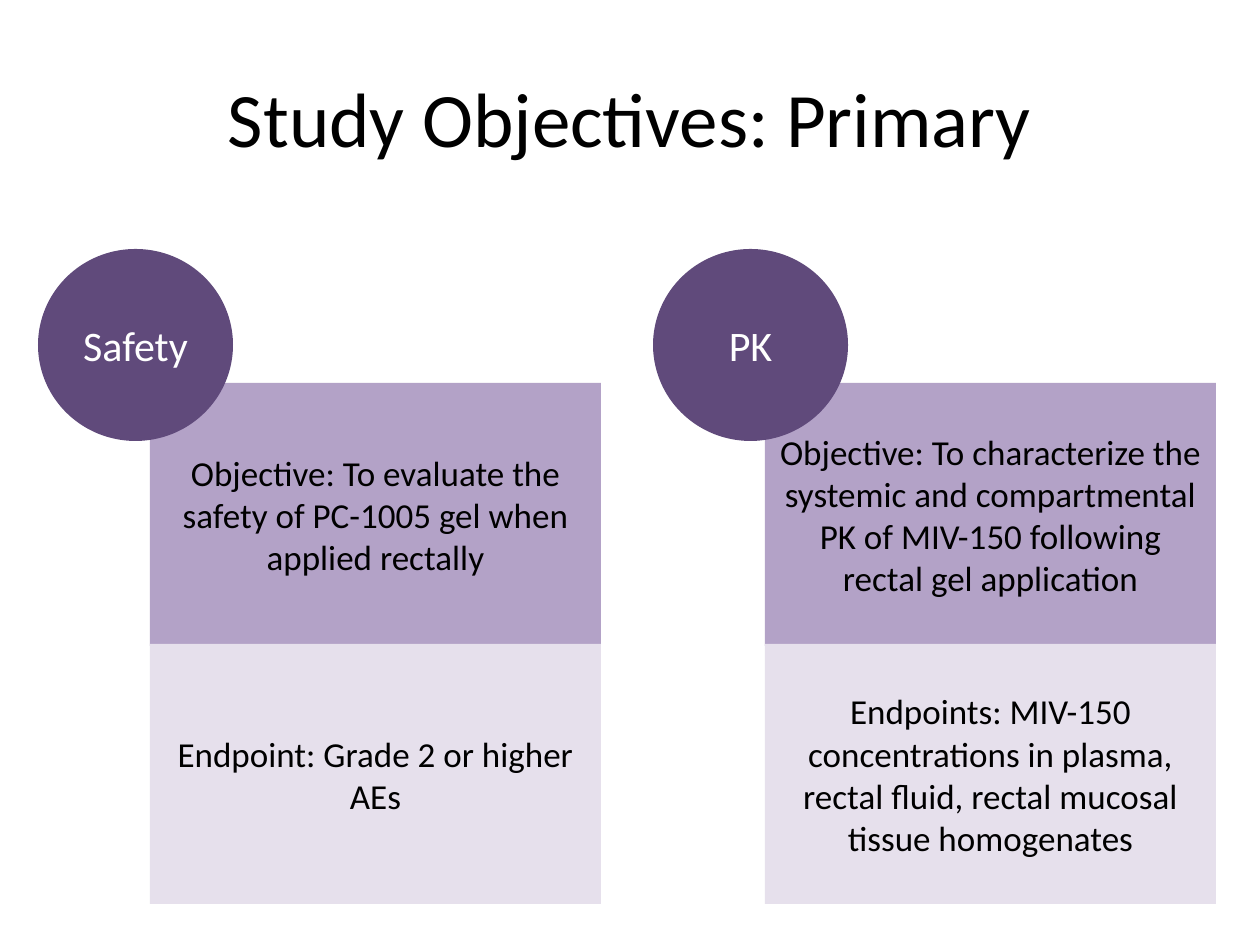
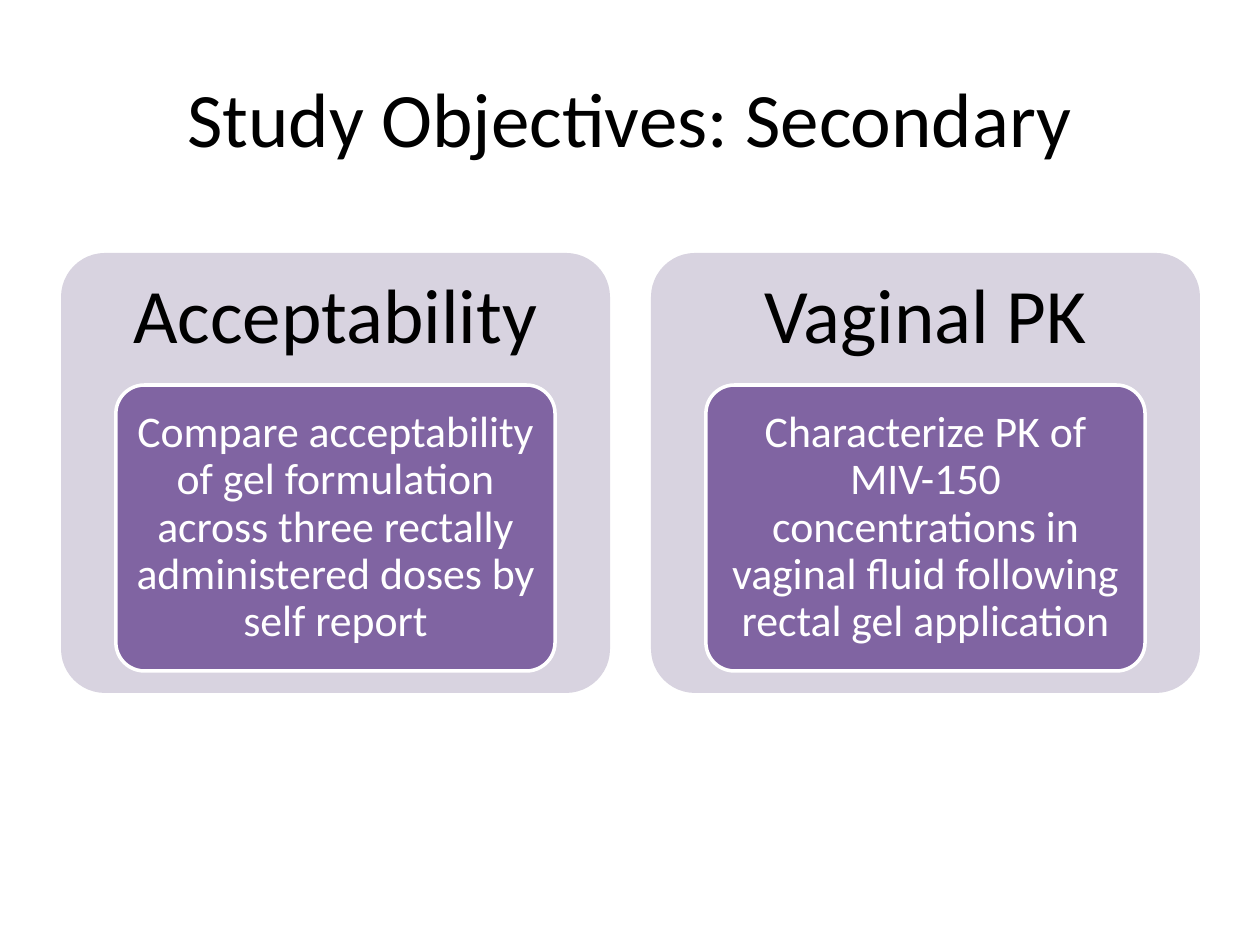
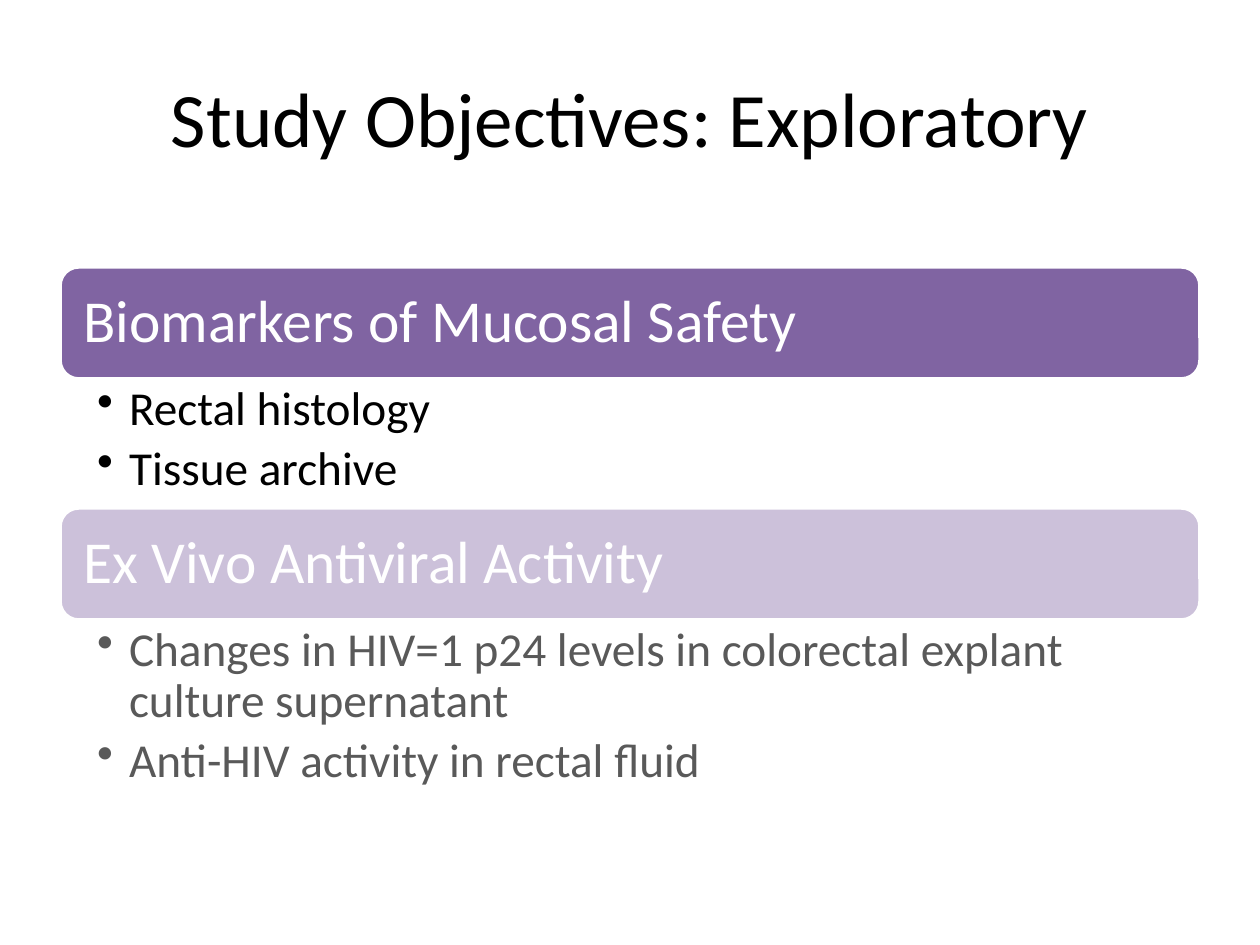
from pptx import Presentation
from pptx.dml.color import RGBColor
from pptx.enum.shapes import MSO_SHAPE as SHAPE
from pptx.enum.text import MSO_ANCHOR as ANCHOR, PP_ALIGN as ALIGN
from pptx.oxml.ns import qn
from pptx.util import Emu, Pt
from lxml.etree import SubElement

# Shared scale and style
EMU_PER_PX = 914400 / 126
FONT = "Calibri"
BLACK, WHITE, GREY = "000000", "FFFFFF", "595959"
DEEP, PURPLE, MID = "604A7B", "8064A2", "B3A2C7"
SOFT, CARD, PALE = "CCC1DA", "D8D3E0", "E6E0EC"


def px(length):
    return Emu(round(length * EMU_PER_PX))


def color(hex_code):
    return RGBColor.from_string(hex_code)


def add_bullet(para):
    props = para._p.get_or_add_pPr()
    props.set("marL", str(px(32)))
    props.set("indent", str(px(-32)))
    SubElement(props, qn("a:buChar")).set("char", "•")


def write(shape, lines, size, ink, align=ALIGN.CENTER, anchor=ANCHOR.MIDDLE,
          insets=(13, 6, 13, 6), spacing=1.0, after=0, bullets=False):
    frame = shape.text_frame
    frame.word_wrap = True
    frame.vertical_anchor = anchor
    (frame.margin_left, frame.margin_top,
     frame.margin_right, frame.margin_bottom) = map(px, insets)
    for index, line in enumerate(lines):
        para = frame.add_paragraph() if index else frame.paragraphs[0]
        para.text = line
        para.alignment = align
        para.line_spacing = spacing
        para.space_after = Pt(after)
        if bullets:
            add_bullet(para)
        para.font.name = FONT
        para.font.size = Pt(size)
        para.font.color.rgb = color(ink)


def add_text(page, box, lines, size, ink, **style):
    write(page.shapes.add_textbox(*map(px, box)), lines, size, ink, **style)


def add_panel(page, kind, box, fill, outline=None, radius=None):
    panel = page.shapes.add_shape(kind, *map(px, box))
    panel.shadow.inherit = False
    panel.fill.solid()
    panel.fill.fore_color.rgb = color(fill)
    if outline:
        panel.line.color.rgb = color(outline)
        panel.line.width = Pt(2)
    else:
        panel.line.fill.background()
    if radius is not None:
        panel.adjustments[0] = radius
    return panel


def add_page(deck, title):
    page = deck.slides.add_slide(deck.slide_layouts[6])
    add_text(page, (63, 38, 1134, 157), [title], 44, BLACK)
    return page


def objective_column(page, box, label, objective, endpoint):
    """A circle over the corner of two stacked panels."""
    left, top, width, height = box
    for offset, panel_height, fill, text in ((134, 263, MID, objective),
                                             (395, height - 395, PALE, endpoint)):
        panel = add_panel(page, SHAPE.RECTANGLE,
                          (left + 112, top + offset, width - 112, panel_height), fill)
        write(panel, [text], 20, BLACK)
    circle = add_panel(page, SHAPE.OVAL, (left, top, 195, 192), DEEP)
    write(circle, [label], 24, WHITE)


def objective_card(page, box, heading, text):
    """A rounded card with a heading and an inner panel."""
    left, top, width, height = box
    add_panel(page, SHAPE.ROUNDED_RECTANGLE, box, CARD, radius=0.1)
    add_text(page, (left, top, width, height * 0.3), [heading], 44, BLACK,
             insets=(23, 23, 23, 23), spacing=0.9)
    inner = add_panel(page, SHAPE.ROUNDED_RECTANGLE,
                      (left + width * 0.1, top + height * 0.3, width * 0.8, height * 0.65),
                      PURPLE, outline=WHITE, radius=0.1)
    write(inner, [text], 25, WHITE, insets=(9, 6, 9, 6), spacing=0.9)


def topic_section(page, box, heading, points, fill, ink):
    """A heading bar with a bulleted list below."""
    left, top, width, height = box
    bar_height = 112
    bar = add_panel(page, SHAPE.ROUNDED_RECTANGLE, (left, top, width, bar_height),
                    fill, outline=WHITE)
    write(bar, [heading], 34, WHITE, align=ALIGN.LEFT,
          insets=(18, 18, 18, 18), spacing=0.9)
    add_text(page, (left, top + bar_height, width, height - bar_height), points, 27, ink,
             align=ALIGN.LEFT, anchor=ANCHOR.TOP, insets=(37, 6, 33, 6),
             spacing=0.9, after=5, bullets=True)


def main():
    deck = Presentation()
    deck.slide_width, deck.slide_height = px(1260), px(945)

    # Primary objectives
    page = add_page(deck, "Study Objectives: Primary")
    columns = (
        ("Safety",
         "Objective: To evaluate the safety of PC-1005 gel when applied rectally",
         "Endpoint: Grade 2 or higher AEs"),
        ("PK",
         "Objective: To characterize the systemic and compartmental PK of MIV-150 "
         "following rectal gel application",
         "Endpoints: MIV-150 concentrations in plasma, rectal fluid, "
         "rectal mucosal tissue homogenates"),
    )
    for index, column in enumerate(columns):
        objective_column(page, (38 + index * 615, 249, 563, 655), *column)

    # Secondary objectives
    page = add_page(deck, "Study Objectives: Secondary")
    cards = (
        ("Acceptability",
         "Compare acceptability of gel formulation across three rectally "
         "administered doses by self report"),
        ("Vaginal PK",
         "Characterize PK of MIV-150 concentrations in vaginal fluid "
         "following rectal gel application"),
    )
    for index, card in enumerate(cards):
        objective_card(page, (61 + index * 590, 253, 549, 440), *card)

    # Exploratory objectives
    page = add_page(deck, "Study Objectives: Exploratory")
    sections = (
        (241, "Biomarkers of Mucosal Safety",
         ["Rectal histology", "Tissue archive"], PURPLE, BLACK),
        (291, "Ex Vivo Antiviral Activity",
         ["Changes in HIV=1 p24 levels in colorectal explant culture supernatant",
          "Anti-HIV activity in rectal fluid"], SOFT, GREY),
    )
    top = 267
    for height, *section in sections:
        topic_section(page, (60, top, 1140, height), *section)
        top += height

    deck.save("out.pptx")


if __name__ == "__main__":
    main()
